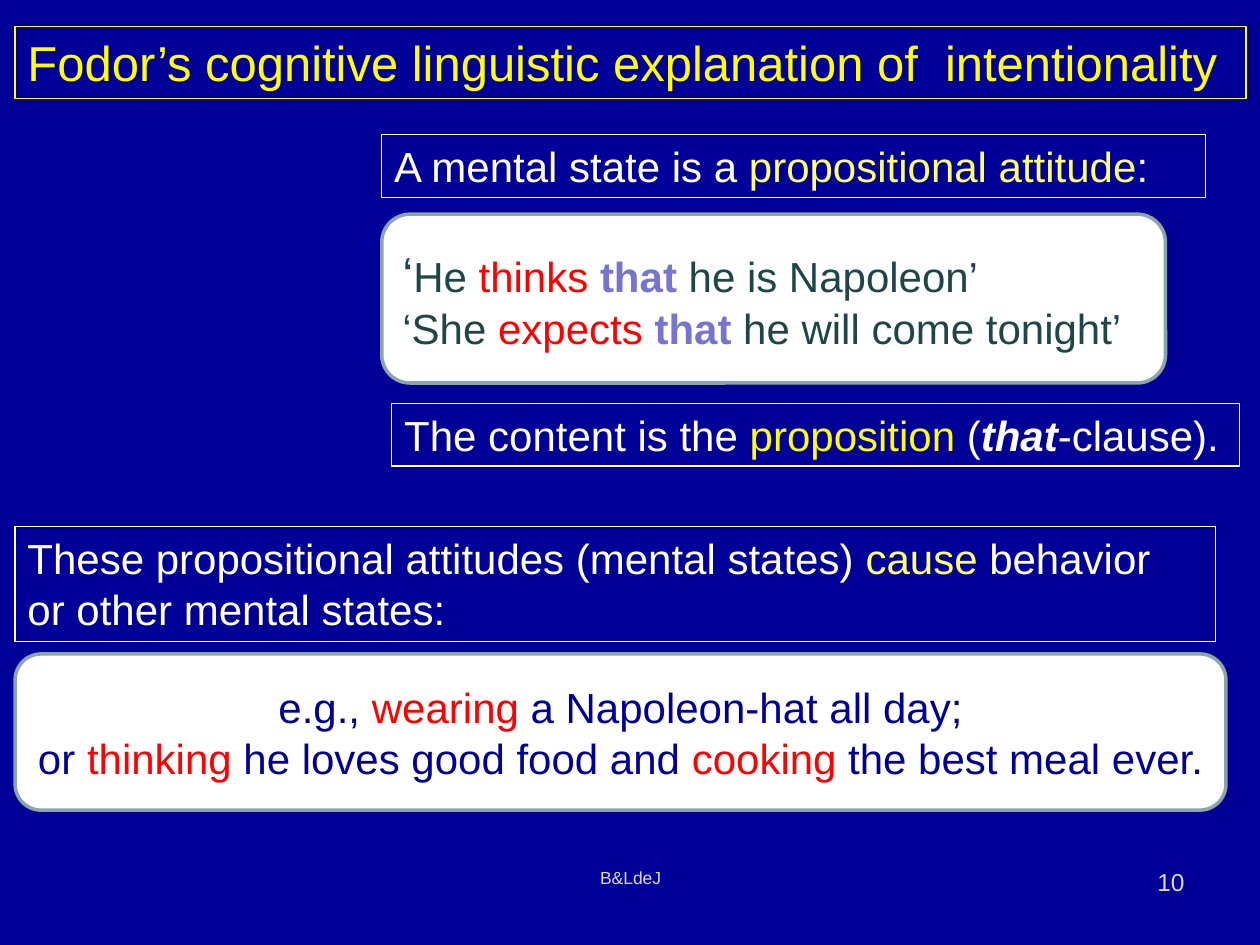
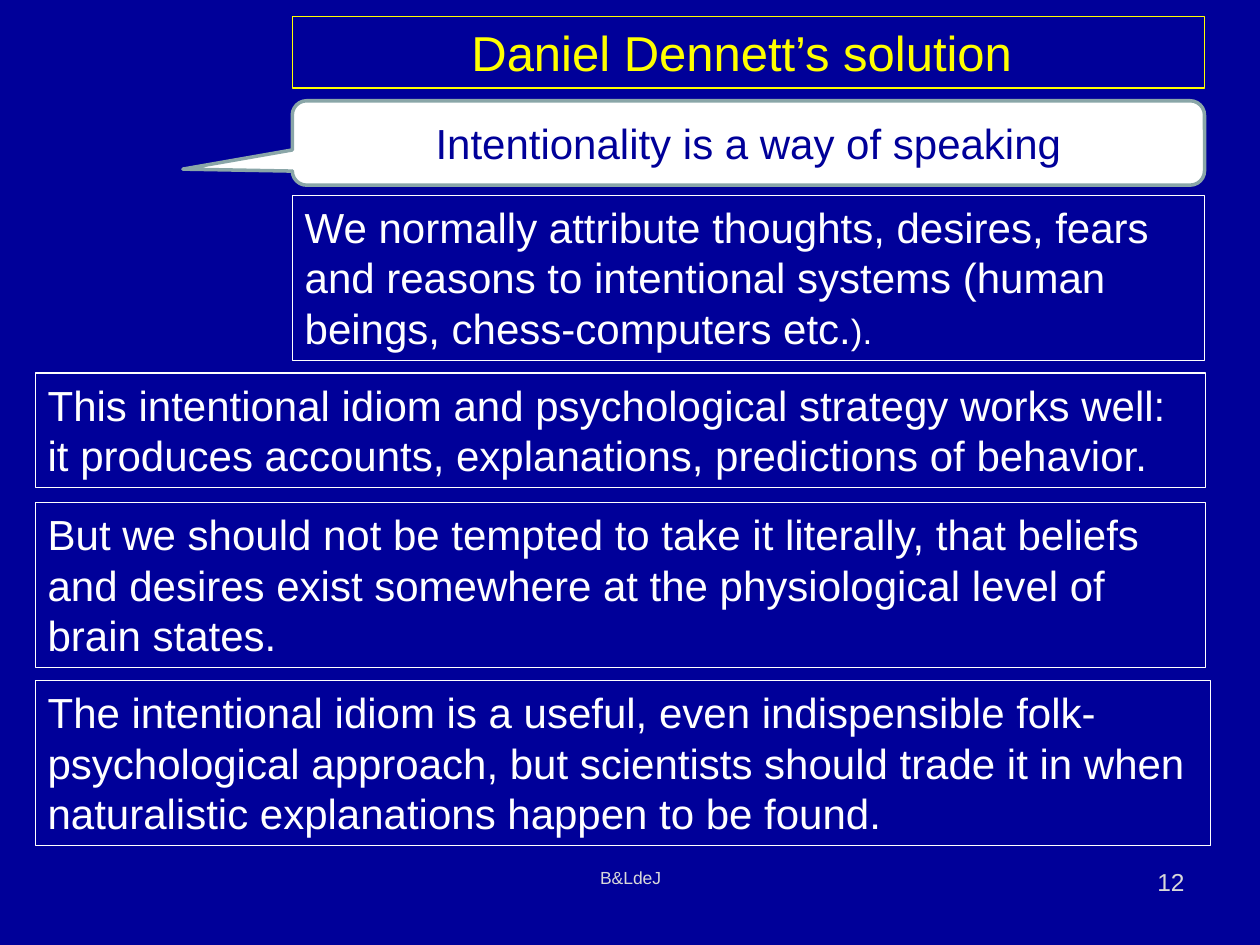
"""Builds two lecture slides on explanations of intentionality."""
from dataclasses import dataclass

from pptx import Presentation
from pptx.dml.color import RGBColor
from pptx.enum.shapes import MSO_SHAPE
from pptx.enum.text import MSO_ANCHOR, PP_ALIGN
from pptx.util import Emu, Pt

EMU_PER_PX = 9144


@dataclass(frozen=True)
class Theme:
    """Colours, type sizes and line widths of the lecture."""
    font: str = "Arial"
    navy: str = "000099"
    white: str = "FFFFFF"
    yellow: str = "FFFF00"
    pale_yellow: str = "FFFF66"
    red: str = "FF0000"
    violet: str = "7575D1"
    teal: str = "1E4649"
    sage: str = "8AA6A8"
    grey: str = "D9D9D9"
    title_size: int = 28
    body_size: int = 24
    small_size: int = 20
    number_size: int = 14
    footer_size: int = 10
    leading: float = 1.2
    thin: float = 0.75
    thick: float = 2


THEME = Theme()
PALE = {"color": THEME.pale_yellow}
YELLOW = {"color": THEME.yellow}
RED = {"color": THEME.red}
THAT = {"color": THEME.violet, "bold": True}
STRONG = {"bold": True, "italic": True}


def px(length):
    """Turn a length in px into EMU."""
    return Emu(length * EMU_PER_PX)


class Deck:
    """Holds the theme and the current slide, and draws each kind of element."""

    def __init__(self, theme):
        """Start an empty presentation of 1000 by 750 px."""
        self.theme = theme
        self.presentation = Presentation()
        self.presentation.slide_width = px(1000)
        self.presentation.slide_height = px(750)
        self.slide = None

    def add_slide(self, number):
        """Add a slide with its background, footer and number."""
        theme = self.theme
        self.slide = self.presentation.slides.add_slide(self.presentation.slide_layouts[6])
        fill = self.slide.background.fill
        fill.solid()
        fill.fore_color.rgb = RGBColor.from_string(theme.navy)
        self.label((342, 683, 317, 52), "B&LdeJ", theme.footer_size, PP_ALIGN.CENTER)
        self.label((717, 683, 233, 52), str(number), theme.number_size, PP_ALIGN.RIGHT)

    def add_lines(self, shape, lines, align=PP_ALIGN.LEFT, anchor=MSO_ANCHOR.TOP, **base):
        """Fill a shape with lines, each a string or a list of strings and (text, format) pairs."""
        frame = shape.text_frame
        frame.word_wrap = True
        frame.vertical_anchor = anchor
        for index, line in enumerate(lines):
            paragraph = frame.paragraphs[0] if index == 0 else frame.add_paragraph()
            paragraph.alignment = align
            pieces = [line] if isinstance(line, str) else line
            sizes = [self.add_run(paragraph, piece, base) for piece in pieces]
            paragraph.line_spacing = Pt(max(sizes) * self.theme.leading)

    def add_run(self, paragraph, piece, base):
        """Add one run and return its type size."""
        text, changes = (piece, {}) if isinstance(piece, str) else piece
        values = {"name": self.theme.font, **base, **changes}
        size = values["size"]
        values["size"] = Pt(size)
        run = paragraph.add_run()
        run.text = text
        run.font.color.rgb = RGBColor.from_string(values.pop("color"))
        for name, value in values.items():
            setattr(run.font, name, value)
        return size

    def label(self, box, text, size, align):
        """Add a line of grey text at the foot of the slide."""
        shape = self.slide.shapes.add_textbox(*map(px, box))
        self.add_lines(shape, [text], align, size=size, color=self.theme.grey)

    def outline(self, kind, box, color, width, fill=None):
        """Draw a preset shape with a line and an optional fill."""
        shape = self.slide.shapes.add_shape(kind, *map(px, box))
        shape.shadow.inherit = False
        shape.line.color.rgb = RGBColor.from_string(color)
        shape.line.width = Pt(width)
        if fill:
            shape.fill.solid()
            shape.fill.fore_color.rgb = RGBColor.from_string(fill)
        else:
            shape.fill.background()
        return shape

    def title(self, box, text, align=PP_ALIGN.LEFT):
        """Draw the yellow title frame."""
        theme = self.theme
        shape = self.outline(MSO_SHAPE.RECTANGLE, box, theme.yellow, theme.thin)
        self.add_lines(shape, [text], align, size=theme.title_size, color=theme.yellow)

    def statement(self, box, lines):
        """Draw a white frame with white text."""
        theme = self.theme
        shape = self.outline(MSO_SHAPE.RECTANGLE, box, theme.white, theme.thin)
        self.add_lines(shape, lines, size=theme.body_size, color=theme.white)

    def card(self, box, lines, color, align=PP_ALIGN.CENTER,
             kind=MSO_SHAPE.ROUNDED_RECTANGLE, adjustments=()):
        """Draw a white rounded card with coloured text."""
        theme = self.theme
        shape = self.outline(kind, box, theme.sage, theme.thick, theme.white)
        for index, value in enumerate(adjustments):
            shape.adjustments[index] = value
        self.add_lines(shape, lines, align, MSO_ANCHOR.MIDDLE, size=theme.body_size, color=color)


def build_fodor(deck):
    """Build the slide on propositional attitudes."""
    deck.add_slide(10)
    deck.title((12, 21, 977, 57), "Fodor’s cognitive linguistic explanation of  intentionality")
    deck.statement((303, 107, 654, 50), [
        ["A mental state is a ", ("propositional attitude", PALE), ":"]])
    deck.card((303, 170, 622, 134), [
        [("‘", {"size": THEME.title_size}), "He ", ("thinks ", RED), ("that", THAT),
         " he is Napoleon’"],
        ["‘She ", ("expects ", RED), ("that", THAT), " he will come tonight’"],
    ], THEME.teal, PP_ALIGN.LEFT)
    deck.statement((12, 418, 953, 91), [
        ["These propositional attitudes (mental states) ", ("cause", PALE), " behavior"],
        "or other mental states:"])
    deck.card((12, 519, 961, 124), [
        ["e.g., ", ("wearing", RED), " a Napoleon-hat all day;"],
        ["or ", ("thinking", RED), " he loves good food and ", ("cooking", RED),
         " the best meal ever."],
    ], THEME.navy)
    deck.statement((311, 320, 673, 50), [
        ["The content is the ", ("proposition", YELLOW), " (", ("that", STRONG), "-clause)."]])


def build_dennett(deck):
    """Build the slide on intentionality as a way of speaking."""
    deck.add_slide(12)
    deck.card((232, 80, 724, 67), ["Intentionality is a way of speaking"], THEME.navy,
              kind=MSO_SHAPE.ROUNDED_RECTANGULAR_CALLOUT, adjustments=(-0.62, 0.31, 0.17))
    deck.statement((232, 155, 724, 131), [
        "We normally attribute thoughts, desires, fears",
        ["and reasons to intentional systems (human beings, chess-computers etc.",
         (").", {"size": THEME.small_size})]])
    deck.statement((28, 296, 929, 91), [
        "This intentional idiom and psychological strategy works well:",
        "it produces accounts, explanations, predictions of behavior."])
    deck.statement((28, 399, 929, 131), [
        "But we should not be tempted to take it literally, that beliefs and desires "
        "exist somewhere at the physiological level of brain states."])
    deck.title((232, 13, 724, 57), "Daniel Dennett’s solution ", PP_ALIGN.CENTER)
    deck.statement((28, 540, 933, 131), [
        "The intentional idiom is a useful, even indispensible folk-",
        "psychological approach, but scientists should trade it in when",
        "naturalistic explanations happen to be found."])


def main():
    """Build and save the presentation."""
    deck = Deck(THEME)
    build_fodor(deck)
    build_dennett(deck)
    deck.presentation.save("out.pptx")


if __name__ == "__main__":
    main()
